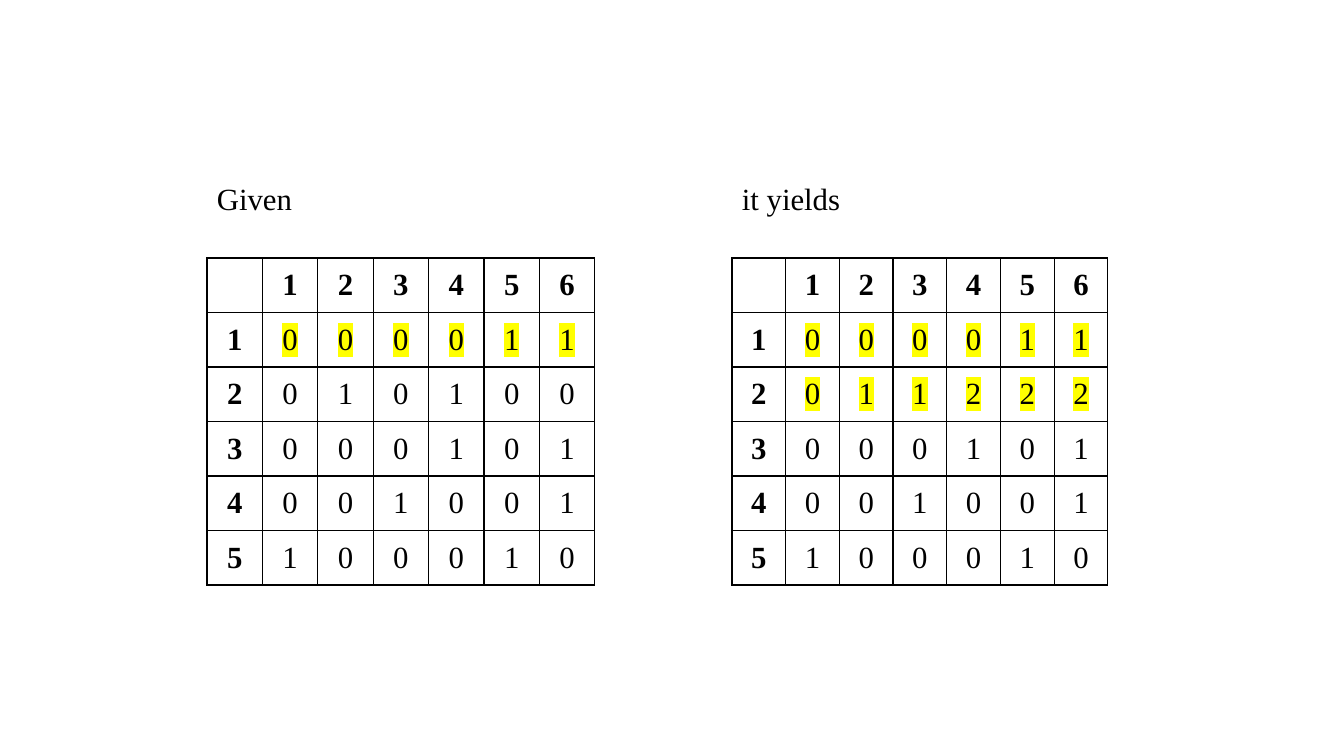
import lxml.etree
import pptx
import pptx.dml.color
import pptx.enum.text
import pptx.oxml.ns
import pptx.util

PX = 914400 / 100.8
PAGE_WIDTH, PAGE_HEIGHT = 1344, 756
FONT, SIZE = "Times New Roman", 22
BLACK, WHITE, YELLOW = "000000", "FFFFFF", "FFFF00"

LABEL_TOP, LABEL_HEIGHT = 175, 47
GRID_TOP, GRID_HEIGHT = 258, 327
CELL_MARGIN = 7

# Each matrix is followed by the number of leading rows to highlight.
MATRICES = [
    {"label": "Given", "left": 207, "label_width": 97, "wrap": False,
     "grid_width": 388, "highlighted": 1,
     "rows": ["000011", "010100", "000101", "001001", "100010"]},
    {"label": "it yields", "left": 732, "label_width": 124, "wrap": True,
     "grid_width": 376, "highlighted": 2,
     "rows": ["000011", "011222", "000101", "001001", "100010"]},
]


def px(length):
    return pptx.util.Emu(round(length * PX))


def color(code):
    return pptx.dml.color.RGBColor.from_string(code)


def add_color(parent, tag, code):
    """Append an element that holds one solid colour."""
    element = lxml.etree.SubElement(parent, pptx.oxml.ns.qn(tag))
    lxml.etree.SubElement(element, pptx.oxml.ns.qn("a:srgbClr"), val=code)
    return element


def write(frame, text, bold=False, align=None, highlight=None):
    para = frame.paragraphs[0]
    para.alignment = align
    span = para.add_run()
    span.text = text
    span.font.name = FONT
    span.font.size = pptx.util.Pt(SIZE)
    span.font.bold = bold
    span.font.color.rgb = color(BLACK)
    if highlight:
        properties = span.font._element
        mark = add_color(properties, "a:highlight", highlight)
        properties.find(pptx.oxml.ns.qn("a:solidFill")).addnext(mark)


def style_cell(cell):
    """Give a cell its margins, thin black borders and white fill."""
    cell.margin_left = cell.margin_right = px(CELL_MARGIN)
    cell.margin_top = cell.margin_bottom = 0
    cell.vertical_anchor = pptx.enum.text.MSO_ANCHOR.MIDDLE
    properties = cell._tc.get_or_add_tcPr()
    for side in ("a:lnL", "a:lnR", "a:lnT", "a:lnB"):
        border = lxml.etree.SubElement(
            properties, pptx.oxml.ns.qn(side), w=str(pptx.util.Pt(1)))
        add_color(border, "a:solidFill", BLACK)
    cell.fill.solid()
    cell.fill.fore_color.rgb = color(WHITE)


def add_matrix(page, matrix):
    column_numbers = range(1, len(matrix["rows"][0]) + 1)
    lines = [["", *map(str, column_numbers)]]
    lines += [[str(number), *row]
              for number, row in enumerate(matrix["rows"], start=1)]
    table = page.shapes.add_table(
        len(lines), len(lines[0]), px(matrix["left"]), px(GRID_TOP),
        px(matrix["grid_width"]), px(GRID_HEIGHT)).table
    table.first_row = table.horz_banding = False
    for r, line in enumerate(lines):
        for c, text in enumerate(line):
            cell = table.cell(r, c)
            style_cell(cell)
            if text:
                header = r == 0 or c == 0
                marked = not header and r <= matrix["highlighted"]
                write(cell.text_frame, text, bold=header,
                      align=pptx.enum.text.PP_ALIGN.CENTER,
                      highlight=YELLOW if marked else None)


def add_label(page, matrix):
    box = page.shapes.add_textbox(
        px(matrix["left"]), px(LABEL_TOP),
        px(matrix["label_width"]), px(LABEL_HEIGHT))
    box.text_frame.word_wrap = matrix["wrap"]
    box.text_frame.auto_size = pptx.enum.text.MSO_AUTO_SIZE.SHAPE_TO_FIT_TEXT
    write(box.text_frame, matrix["label"])


def main():
    deck = pptx.Presentation()
    deck.slide_width, deck.slide_height = px(PAGE_WIDTH), px(PAGE_HEIGHT)
    page = deck.slides.add_slide(deck.slide_layouts[6])
    for matrix in MATRICES:
        add_matrix(page, matrix)
        add_label(page, matrix)
    deck.save("out.pptx")


if __name__ == "__main__":
    main()
